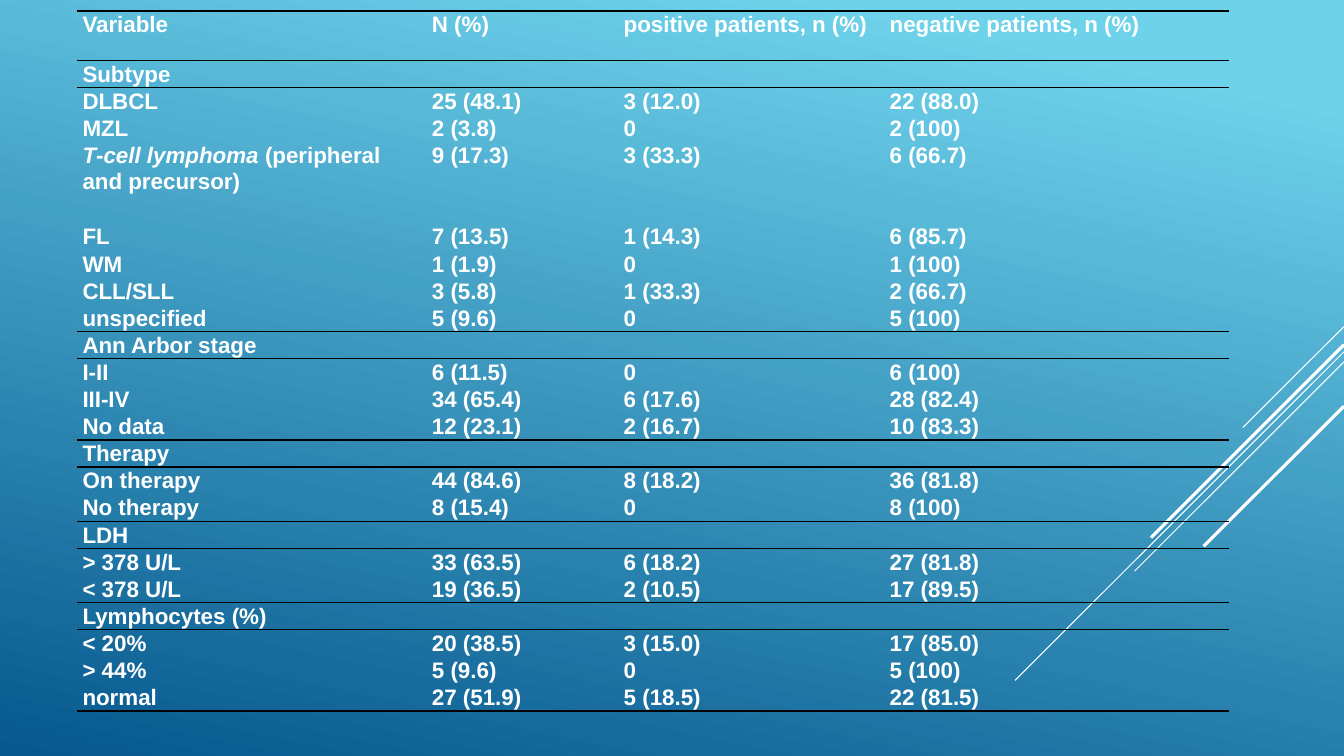
from dataclasses import dataclass

from lxml.etree import SubElement
from pptx import Presentation
from pptx.dml.color import RGBColor
from pptx.enum.shapes import MSO_CONNECTOR as Connector
from pptx.oxml.ns import qn
from pptx.slide import Slide
from pptx.table import Table, _Cell as Cell
from pptx.util import Pt

WHITE = "FFFFFF"
BLACK = "000000"
SLIDE_W, SLIDE_H = 960, 540
TABLE_LEFT, TABLE_TOP = 55.2, 7.8
COLUMN_WIDTHS = (249.6, 137, 190, 246.4)
ROW_H, HEADER_H, TALL_H = 19.38, 35.2, 58.3


@dataclass(frozen=True)
class Streak:
    top: float
    end_x: float
    end_y: float
    width: float


@dataclass(frozen=True)
class Row:
    label: str
    values: tuple[str, ...] = ()
    height: float = ROW_H
    italics: tuple[str, ...] = ()


STREAKS = (
    Streak(233.3, 887.8, 305.3, 0.75),
    Streak(251.3, 725, 486, 0.75),
    Streak(258.5, 810.4, 408, 0.75),
    Streak(246.2, 822.2, 384, 2.25),
    Streak(290.2, 859.7, 390.2, 2.25),
)

ROWS = (
    Row("Variable", ("N (%)", "positive patients, n (%)", "negative patients, n (%)"), HEADER_H),
    Row("Subtype"),
    Row("DLBCL", ("25 (48.1)", "3 (12.0)", "22 (88.0)")),
    Row("MZL", ("2 (3.8)", "0", "2 (100)")),
    Row("T|-|cell lymphoma |(peripheral and precursor)", ("9 (17.3)", "3 (33.3)", "6 (66.7)"),
        TALL_H, ("T", "cell lymphoma ")),
    Row("FL", ("7 (13.5)", "1 (14.3)", "6 (85.7)")),
    Row("WM", ("1 (1.9)", "0", "1 (100)")),
    Row("CLL/SLL", ("3 (5.8)", "1 (33.3)", "2 (66.7)")),
    Row("unspecified", ("5 (9.6)", "0", "5 (100)")),
    Row("Ann Arbor stage"),
    Row("I-II", ("6 (11.5)", "0", "6 (100)")),
    Row("III-IV", ("34 (65.4)", "6 (17.6)", "28 (82.4)")),
    Row("No data", ("12 (23.1)", "2 (16.7)", "10 (83.3)")),
    Row("Therapy"),
    Row("On therapy", ("44 (84.6)", "8 (18.2)", "36 (81.8)")),
    Row("No therapy", ("8 (15.4)", "0", "8 (100)")),
    Row("LDH"),
    Row("> 378 U/L", ("33 (63.5)", "6 (18.2)", "27 (81.8)")),
    Row("< 378 U/L", ("19 (36.5)", "2 (10.5)", "17 (89.5)")),
    Row("Lymphocytes (%)"),
    Row("< 20%", ("20 (38.5)", "3 (15.0)", "17 (85.0)")),
    Row("> 44%", ("5 (9.6)", "0", "5 (100)")),
    Row("normal", ("27 (51.9)", "5 (18.5)", "22 (81.5)")),
)


def rgb(color: str) -> RGBColor:
    return RGBColor.from_string(color)


def paint_background(slide: Slide) -> None:
    fill = slide.background.fill
    fill.gradient()
    fill.gradient_angle = 258
    for stop, position, color in zip(fill.gradient_stops, (0.1, 1), ("6ED2EB", "06588E")):
        stop.position = position
        stop.color.rgb = rgb(color)


def draw_streak(slide: Slide, streak: Streak) -> None:
    line = slide.shapes.add_connector(
        Connector.STRAIGHT, Pt(SLIDE_W), Pt(streak.top), Pt(streak.end_x), Pt(streak.end_y))
    line.line.color.rgb = rgb(WHITE)
    line.line.width = Pt(streak.width)
    SubElement(line._element.spPr, qn("a:effectLst"))


def set_borders(cell: Cell, top: bool, bottom: bool) -> None:
    props = cell._tc.get_or_add_tcPr()
    for side, ruled in (("L", False), ("R", False), ("T", top), ("B", bottom)):
        border = SubElement(props, qn(f"a:ln{side}"), w=str(Pt(1)))
        if ruled:
            fill = SubElement(border, qn("a:solidFill"))
            SubElement(fill, qn("a:srgbClr"), val=str(rgb(BLACK)))
        else:
            SubElement(border, qn("a:noFill"))


def write_cell(cell: Cell, text: str, italics: tuple[str, ...]) -> None:
    cell.margin_left = cell.margin_right = Pt(3.75)
    cell.margin_top = cell.margin_bottom = 0
    p = cell.text_frame.paragraphs[0]
    p.line_spacing = 1.07
    p.font.name = "Arial"
    p.font.size = Pt(16)
    p.font.bold = True
    p.font.color.rgb = rgb(WHITE)
    for part in text.split("|") if text else ():
        r = p.add_run()
        r.text = part
        if part in italics:
            r.font.italic = True


def fill_row(table: Table, index: int, row: Row, edges: set[int]) -> None:
    table.rows[index].height = Pt(row.height)
    texts = (row.label, *(row.values or ("",) * 3))
    for column, text in enumerate(texts):
        cell = table.cell(index, column)
        write_cell(cell, text, row.italics)
        set_borders(cell, index in edges, index + 1 in edges)
        cell.fill.background()
    if not row.values:
        table.cell(index, 0).merge(table.cell(index, len(texts) - 1))


def draw_table(slide: Slide) -> None:
    table = slide.shapes.add_table(
        len(ROWS), len(COLUMN_WIDTHS), Pt(TABLE_LEFT), Pt(TABLE_TOP),
        Pt(sum(COLUMN_WIDTHS)), Pt(sum(row.height for row in ROWS))).table
    table.first_row = table.horz_banding = False
    for column, width in zip(table.columns, COLUMN_WIDTHS):
        column.width = Pt(width)
    sections = {i for i, row in enumerate(ROWS) if not row.values}
    edges = {0, len(ROWS)} | sections | {i + 1 for i in sections}
    for index, row in enumerate(ROWS):
        fill_row(table, index, row, edges)


def main() -> None:
    prs = Presentation()
    prs.slide_width, prs.slide_height = Pt(SLIDE_W), Pt(SLIDE_H)
    slide = prs.slides.add_slide(prs.slide_layouts[6])
    paint_background(slide)
    for streak in STREAKS:
        draw_streak(slide, streak)
    draw_table(slide)
    prs.save("out.pptx")


if __name__ == "__main__":
    main()
